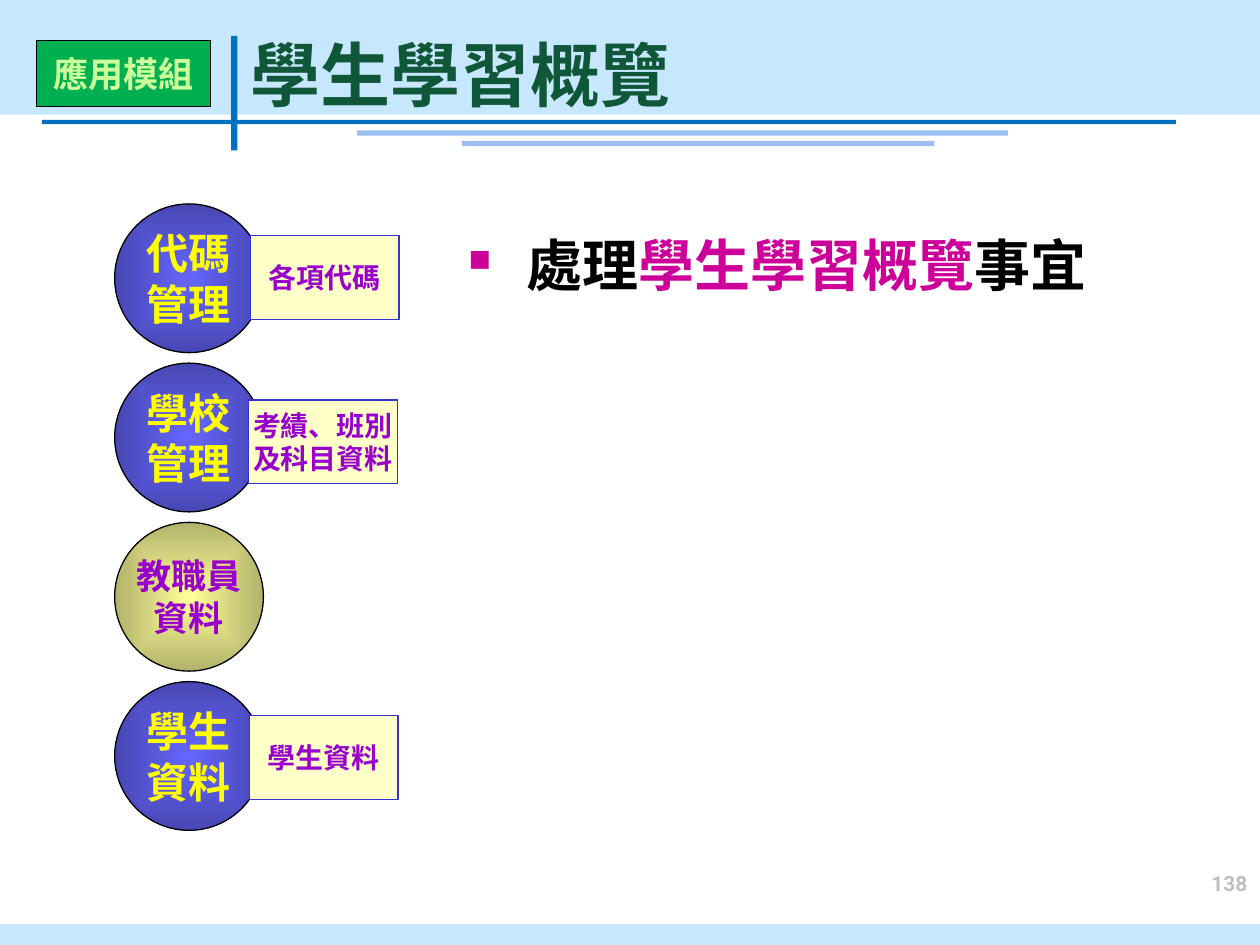
from lxml import etree
from pptx import Presentation
from pptx.dml.color import RGBColor
from pptx.enum.shapes import MSO_SHAPE
from pptx.enum.text import MSO_ANCHOR, PP_ALIGN
from pptx.oxml.ns import qn
from pptx.util import Pt

RECT, OVAL = MSO_SHAPE.RECTANGLE, MSO_SHAPE.OVAL
TOP, MIDDLE, BOTTOM = MSO_ANCHOR.TOP, MSO_ANCHOR.MIDDLE, MSO_ANCHOR.BOTTOM
LEFT, CENTER, RIGHT = PP_ALIGN.LEFT, PP_ALIGN.CENTER, PP_ALIGN.RIGHT
CJK, LATIN = "Noto Sans CJK SC", "Roboto"
COLORS = {
    "band": "C7E7FD", "rule": "0070C0", "soft_rule": "9ABFF0",
    "title": "105638", "page": "BFBFBF", "black": "000000", "white": "FFFFFF",
    "tag": "00B050", "tag_text": "CCFF99", "accent": "CC0099",
    "blue": "6666FF", "blue_edge": "4747B2",
    "yellow": "FFFF99", "yellow_edge": "B2B26B",
    "module_text": "FFFF00", "purple": "9900CC",
    "label": "FFFFC8", "label_line": "3333CC",
}
FRAME = [
    (0, 0, 720, 65.5, "band"), (0, 528, 720, 12, "band"),
    (132, 20.5, 3.6, 65.5, "rule"), (24, 68.5, 648, 2.4, "rule"),
    (204, 74.5, 372, 3, "soft_rule"), (264, 80.5, 270, 3, "soft_rule"),
]
CIRCLE_LEFT, CIRCLE_TOP, CIRCLE_SIZE, CIRCLE_PITCH = 65.5, 116.5, 85, 91
MODULES = [
    (["代碼", "管理"], 24, "blue", "module_text"),
    (["學校", "管理"], 24, "blue", "module_text"),
    (["教職員", "資料"], 20, "yellow", "purple"),
    (["學生", "資料"], 24, "blue", "module_text"),
]
LABELS = [
    (143, 134.5, ["各項代碼"]),
    (142, 228.5, ["考績、班別", "及科目資料"]),
    (142.5, 409, ["學生資料"]),
]


def rgb(name):
    """Look up a named colour."""
    return RGBColor.from_string(COLORS[name])


def add_block(slide, kind, box, fill, line=None):
    """Add a flat shape with an optional thin outline."""
    block = slide.shapes.add_shape(kind, *map(Pt, box))
    block.shadow.inherit = False
    block.fill.solid()
    block.fill.fore_color.rgb = rgb(fill)
    if line:
        block.line.color.rgb = rgb(line)
        block.line.width = Pt(0.75)
    else:
        block.line.fill.background()
    return block


def style(paragraph, size, color, face=CJK):
    """Set the bold typeface of a paragraph for Latin and East Asian text."""
    font = paragraph.font
    font.size, font.bold, font.name = Pt(size), True, face
    font.color.rgb = rgb(color)
    latin = paragraph._p.pPr.find(qn("a:defRPr")).find(qn("a:latin"))
    latin.addnext(latin.makeelement(qn("a:ea"), {"typeface": face}))


def write(holder, lines, size, color, align=CENTER, anchor=MIDDLE, wrap=False, face=CJK):
    """Write one paragraph per line into a shape or text box."""
    frame = holder.text_frame
    frame.word_wrap, frame.vertical_anchor = wrap, anchor
    frame.text = "\n".join(lines)
    for paragraph in frame.paragraphs:
        paragraph.alignment = align
        if len(lines) > 1:
            paragraph.line_spacing = Pt(size * 1.2)
        style(paragraph, size, color, face)


def add_text(slide, box, text, size, color, **options):
    """Add a wrapping text box with one line of text."""
    holder = slide.shapes.add_textbox(*map(Pt, box))
    write(holder, [text], size, color, wrap=True, **options)


def shade_from_center(shape, inner, outer):
    """Fill a shape with a gradient that spreads from its centre."""
    shape.fill.gradient()
    for stop, name, position in zip(shape.fill.gradient_stops, (inner, outer), (0, 1)):
        stop.color.rgb, stop.position = rgb(name), position
    gradient = shape._element.spPr.find(qn("a:gradFill"))
    gradient.remove(gradient.find(qn("a:lin")))
    spread = etree.SubElement(gradient, qn("a:path"), {"path": "shape"})
    etree.SubElement(spread, qn("a:fillToRect"), dict.fromkeys("ltrb", "50000"))


def add_module(slide, row, lines, size, tone, color):
    """Add one module circle of the left column."""
    box = (CIRCLE_LEFT, CIRCLE_TOP + row * CIRCLE_PITCH, CIRCLE_SIZE, CIRCLE_SIZE)
    circle = add_block(slide, OVAL, box, tone, "black")
    shade_from_center(circle, tone, f"{tone}_edge")
    write(circle, lines, size, color)


def add_purpose(slide):
    """Add the bulleted statement with its highlighted phrase."""
    panel = add_block(slide, RECT, (258, 128, 423, 89), "white")
    frame = panel.text_frame
    frame.word_wrap, frame.vertical_anchor = True, TOP
    paragraph = frame.paragraphs[0]
    paragraph.alignment, paragraph.level = LEFT, 1
    properties = paragraph._p.get_or_add_pPr()
    properties.set("marL", str(Pt(35.5)))
    properties.set("indent", str(Pt(-33)))
    bullet_color = etree.SubElement(properties, qn("a:buClr"))
    etree.SubElement(bullet_color, qn("a:srgbClr"), {"val": COLORS["accent"]})
    etree.SubElement(properties, qn("a:buSzPct"), {"val": "55000"})
    etree.SubElement(properties, qn("a:buChar"), {"char": "■"})
    style(paragraph, 32, "black")
    for text, color in (("處理", "black"), ("學生學習概覽", "accent"), ("事宜", "black")):
        run = paragraph.add_run()
        run.text = text
        run.font.color.rgb = rgb(color)


def main():
    """Build the slide and save it."""
    deck = Presentation()
    deck.slide_width, deck.slide_height = Pt(720), Pt(540)
    slide = deck.slides.add_slide(deck.slide_layouts[6])
    for *box, color in FRAME:
        add_block(slide, RECT, box, color)
    add_text(slide, (598.5, 494, 121.5, 36), "138", 12, "page",
             align=RIGHT, anchor=TOP, face=LATIN)
    add_text(slide, (136, 9.5, 564, 60), "學生學習概覽", 40, "title",
             align=LEFT, anchor=BOTTOM)
    add_purpose(slide)
    tag = add_block(slide, RECT, (21, 23, 99.5, 38), "tag", "black")
    write(tag, ["應用模組"], 20, "tag_text")
    for row, module in enumerate(MODULES):
        add_module(slide, row, *module)
    for left, top, lines in LABELS:
        label = add_block(slide, RECT, (left, top, 85, 48), "label", "label_line")
        write(label, lines, 16, "purple")
    deck.save("out.pptx")


if __name__ == "__main__":
    main()
